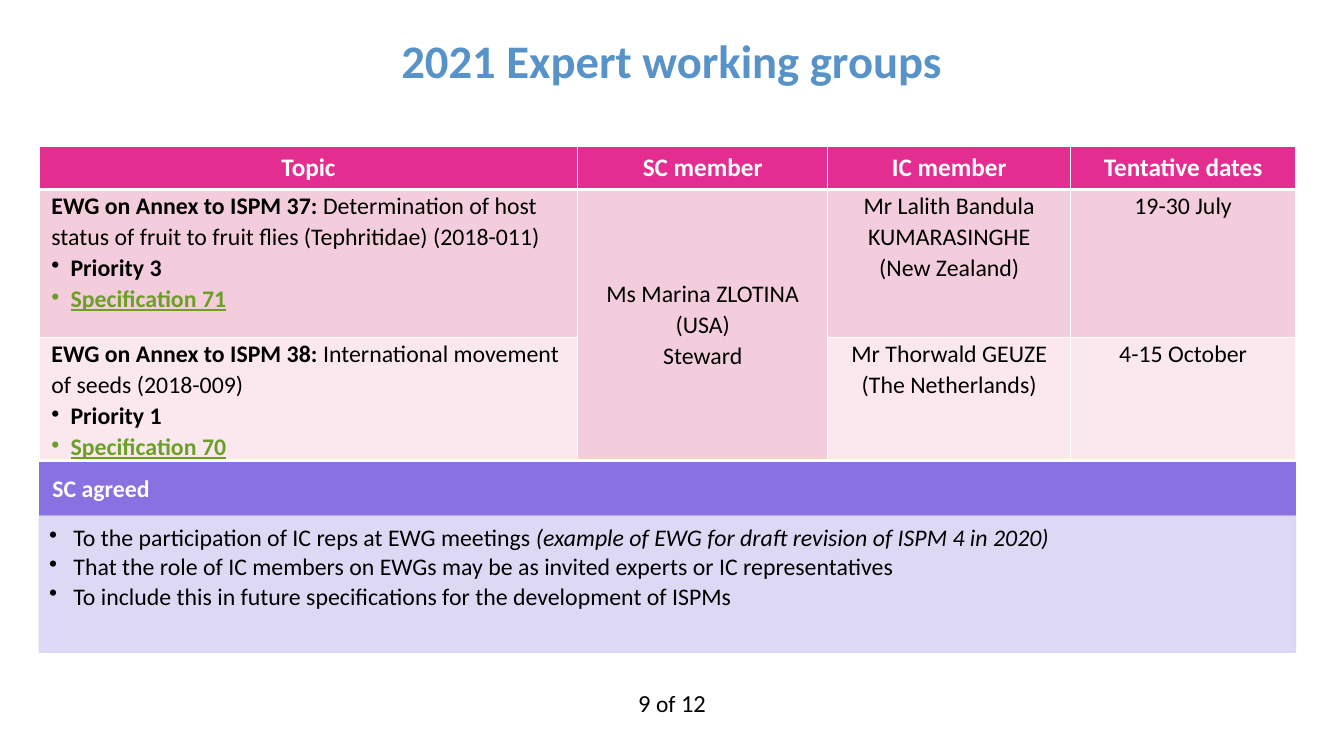
from lxml import etree
from pptx import Presentation
from pptx.dml.color import RGBColor
from pptx.enum.shapes import MSO_SHAPE
from pptx.enum.text import MSO_ANCHOR, PP_ALIGN
from pptx.oxml.ns import qn
from pptx.util import Inches, Pt

LEFT, CENTER = PP_ALIGN.LEFT, PP_ALIGN.CENTER
TOP, MIDDLE = MSO_ANCHOR.TOP, MSO_ANCHOR.MIDDLE
RECTANGLE = MSO_SHAPE.RECTANGLE

WHITE = RGBColor(0xFF, 0xFF, 0xFF)
BLACK = RGBColor(0x00, 0x00, 0x00)
BLUE = RGBColor(0x57, 0x92, 0xC9)
MAGENTA = RGBColor(0xE3, 0x2D, 0x91)
PINK = RGBColor(0xF4, 0xCD, 0xDC)
PALE_PINK = RGBColor(0xFA, 0xE8, 0xEE)
GREEN = RGBColor(0x6B, 0x9F, 0x25)
PURPLE = RGBColor(0x89, 0x71, 0xE1)
LAVENDER = RGBColor(0xDA, 0xD5, 0xF4)

FONT = "Calibri"
WIDTH, HEIGHT = 13.33, 7.5
MARGIN = 0.39
CONTENT_WIDTH = 12.46
BODY_SIZE = 17

COLUMNS = [5.34, 2.48, 2.41, 2.23]
ROWS = [0.43, 1.47, 1.08]
HEADINGS = ["Topic", "SC member", "IC member", "Tentative dates"]
STEWARD = ["Ms Marina ZLOTINA (USA)", "Steward"]
# topic, its description, priority, specification, IC member, dates, fill
GROUPS = [
    ("EWG on Annex to ISPM 37:",
     " Determination of host status of fruit to fruit flies (Tephritidae) (2018-011)",
     "Priority 3", "Specification 71",
     ["Mr Lalith Bandula KUMARASINGHE", "(New Zealand)"], "19-30 July", PINK),
    ("EWG on Annex to ISPM 38:", " International movement of seeds (2018-009)",
     "Priority 1", "Specification 70",
     ["Mr Thorwald GEUZE", "(The Netherlands)"], "4-15 October", PALE_PINK),
]
AGREED = [
    [("To the participation of IC reps at EWG meetings ", {}),
     ("(example of EWG for draft revision of ISPM 4 in 2020)", {"italic": True})],
    [("That the role of IC members on EWGs may be as invited experts or IC representatives", {})],
    [("To include this in future specifications for the development of ISPMs", {})],
]


def set_frame(tf, anchor=TOP, margins=(0, 0, 0, 0)):
    """Set anchor and margins (left, top, right, bottom) of a text frame or cell."""
    tf.vertical_anchor = anchor
    tf.margin_left, tf.margin_top, tf.margin_right, tf.margin_bottom = map(Inches, margins)


def add_run(p, text, size=BODY_SIZE, color=BLACK, bold=False, italic=False, underline=False):
    r = p.add_run()
    r.text = text
    font = r.font
    font.name, font.size, font.color.rgb = FONT, Pt(size), color
    font.bold, font.italic, font.underline = bold, italic, underline


def write(tf, paragraphs, align=LEFT, spacing=1.0, after=0, bullet_from=None, indent=0.19):
    """Fill a frame; paragraphs are lists of (text, format), bulleted from an index on."""
    for i, runs in enumerate(paragraphs):
        p = tf.paragraphs[0] if i == 0 else tf.add_paragraph()
        if bullet_from is not None and i >= bullet_from:
            pPr = p._p.get_or_add_pPr()
            pPr.set("marL", str(Inches(indent)))
            pPr.set("indent", str(-Inches(indent)))
            etree.SubElement(pPr, qn("a:buChar"), char="•")
        p.alignment, p.line_spacing, p.space_after = align, spacing, Pt(after)
        for text, style in runs:
            add_run(p, text, **style)


def style_cell(cell, fill, bottom=1):
    tcPr = cell._tc.get_or_add_tcPr()
    for side, width in (("L", 1), ("R", 1), ("T", 1), ("B", bottom)):
        ln = etree.SubElement(tcPr, qn(f"a:ln{side}"), w=str(Pt(width)))
        solid = etree.SubElement(ln, qn("a:solidFill"))
        etree.SubElement(solid, qn("a:srgbClr"), val=str(WHITE))
    cell.fill.solid()
    cell.fill.fore_color.rgb = fill


def add_box(slide, left, top, width, height):
    return slide.shapes.add_textbox(*map(Inches, (left, top, width, height)))


def add_title(slide, left, top, width, height):
    tf = add_box(slide, left, top, width, height).text_frame
    tf.word_wrap = True
    set_frame(tf, MIDDLE, (0.1, 0.05, 0.1, 0.05))
    title = ("2021 Expert working groups", {"size": 33.3, "color": BLUE, "bold": True})
    write(tf, [[title]], CENTER, 0.9)


def add_groups_table(slide, left, top):
    box = map(Inches, (left, top, sum(COLUMNS), sum(ROWS)))
    table = slide.shapes.add_table(len(ROWS), len(COLUMNS), *box).table
    for column, width in zip(table.columns, COLUMNS):
        column.width = Inches(width)
    for row, height in zip(table.rows, ROWS):
        row.height = Inches(height)
    side_margins = [(m, 0, m, 0) for m in (0.12, 0, 0, 0.12)]

    for c, heading in enumerate(HEADINGS):
        cell = table.cell(0, c)
        style_cell(cell, MAGENTA, bottom=3)
        set_frame(cell, MIDDLE, side_margins[c])
        style = {"size": 18, "color": WHITE, "bold": True}
        write(cell.text_frame, [[(heading, style)]], CENTER)

    for r, (topic, about, priority, document, member, dates, fill) in enumerate(GROUPS, 1):
        for c, margins in enumerate(side_margins):
            style_cell(table.cell(r, c), fill)
            set_frame(table.cell(r, c), TOP, margins)
        details = [[(topic, {"bold": True}), (about, {})],
                   [(priority, {"bold": True})],
                   [(document, {"bold": True, "color": GREEN, "underline": True})]]
        write(table.cell(r, 0).text_frame, details, LEFT, 1.07, bullet_from=1)
        for c, lines in ((2, member), (3, [dates])):
            write(table.cell(r, c).text_frame, [[(t, {})] for t in lines], CENTER, 1.07)

    steward = table.cell(1, 1)
    steward.merge(table.cell(2, 1))
    set_frame(steward, MIDDLE)
    write(steward.text_frame, [[(t, {})] for t in STEWARD], CENTER, 1.07)


def add_panel(slide, left, top, width, height, color, opacity=100):
    sp = slide.shapes.add_shape(RECTANGLE, *map(Inches, (left, top, width, height)))
    sp.shadow.inherit = False
    sp.fill.solid()
    sp.fill.fore_color.rgb = color
    sp.line.color.rgb = color
    sp.line.width = Pt(1)
    if opacity < 100:
        for clr in sp._element.spPr.iter(qn("a:srgbClr")):
            etree.SubElement(clr, qn("a:alpha"), val=str(opacity * 1000))
    sp.text_frame.word_wrap = True
    return sp.text_frame


def add_agreement(slide, left, top, width, header_height, body_height):
    tf = add_panel(slide, left, top, width, header_height, PURPLE)
    set_frame(tf, MIDDLE, (0.13, 0.08, 0.13, 0.08))
    write(tf, [[("SC agreed", {"color": WHITE, "bold": True})]], LEFT, 0.9)
    tf = add_panel(slide, left, top + header_height, width, body_height, LAVENDER, 90)
    set_frame(tf, TOP, (0.1, 0.1, 0.13, 0.15))
    write(tf, AGREED, LEFT, 0.9, after=2.5, bullet_from=0, indent=0.24)


def add_page_number(slide, left, top, width, height):
    tf = add_box(slide, left, top, width, height).text_frame
    tf.word_wrap = False
    set_frame(tf, TOP, (0.17, 0.08, 0.17, 0.08))
    parts = [("9 ", {"size": 17.5}), ("of", {"size": 16.7}), (" 12", {"size": 17.5})]
    write(tf, [parts], CENTER)


def main():
    prs = Presentation()
    prs.slide_width, prs.slide_height = Inches(WIDTH), Inches(HEIGHT)
    slide = prs.slides.add_slide(prs.slide_layouts[6])
    add_title(slide, 0, 0, WIDTH, HEIGHT / 6)
    add_groups_table(slide, MARGIN, 1.45)
    add_agreement(slide, MARGIN, 4.59, CONTENT_WIDTH, 0.53, 1.35)
    add_page_number(slide, 6.07, 6.75, 1.19, 0.46)
    prs.save("out.pptx")


if __name__ == "__main__":
    main()
